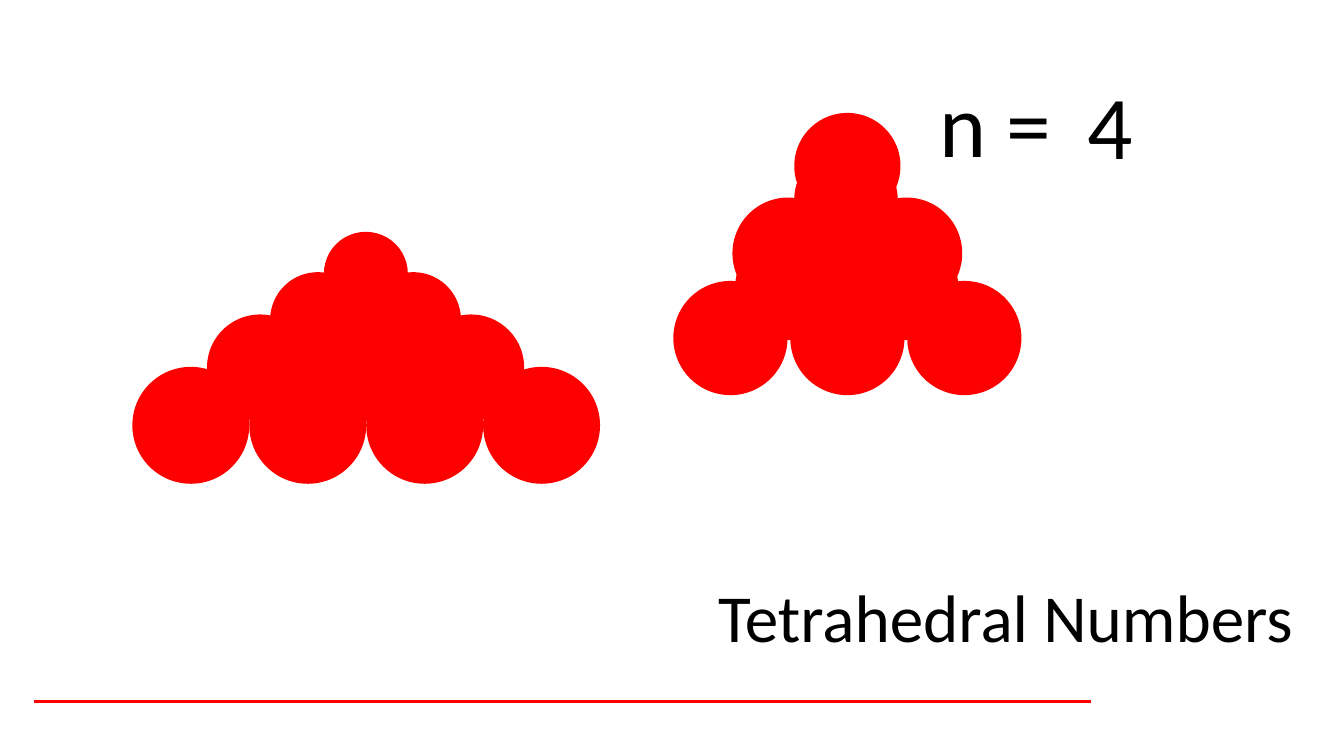
"""Build the tetrahedral numbers slide: two stacks of spheres for n = 4."""
from pptx import Presentation
from pptx.dml.color import RGBColor
from pptx.enum.shapes import MSO_CONNECTOR, MSO_SHAPE
from pptx.enum.text import MSO_AUTO_SIZE, PP_ALIGN
from pptx.oxml.ns import qn
from pptx.util import Pt

STRAIGHT = MSO_CONNECTOR.STRAIGHT
OVAL = MSO_SHAPE.OVAL
GROW = MSO_AUTO_SIZE.SHAPE_TO_FIT_TEXT
LEFT, RIGHT = PP_ALIGN.LEFT, PP_ALIGN.RIGHT

PX = 4572
THEME = {
    "font": "Calibri",
    "ink": RGBColor(0, 0, 0),
    "rule": RGBColor(0xFF, 0, 0),
    "sphere": RGBColor(0xFD, 0x01, 0),
    "count_size": Pt(48),
    "title_size": Pt(36),
    "rule_width": Pt(2),
}

prs = Presentation()
prs.slide_width, prs.slide_height = 2000 * PX, 1125 * PX
slide = prs.slides.add_slide(prs.slide_layouts[6])

footer_rule = slide.shapes.add_connector(STRAIGHT, 50 * PX, 1044 * PX, 1624 * PX, 1044 * PX)
footer_rule.line.color.rgb = THEME["rule"]
footer_rule.line.width = THEME["rule_width"]
properties = footer_rule._element.spPr
properties.append(properties.makeelement(qn("a:effectLst"), {}))

labels = [
    ("n =", 1378, 92, 252, 182, "count_size", LEFT),
    ("4", 1598, 94, 252, 182, "count_size", LEFT),
    ("Tetrahedral Numbers", 826, 846, 1118, 142, "title_size", RIGHT),
]
for wording, left, top, width, height, size, align in labels:
    label = slide.shapes.add_textbox(left * PX, top * PX, width * PX, height * PX)
    frame = label.text_frame
    frame.word_wrap = True
    frame.auto_size = GROW
    frame.text = wording
    paragraph = frame.paragraphs[0]
    paragraph.alignment = align
    font = paragraph.runs[0].font
    font.name = THEME["font"]
    font.size = THEME[size]
    font.color.rgb = THEME["ink"]

sphere_rows = [
    (482, 345, 125, 0, 1),
    (402, 405, 142, 142, 2),
    (308, 468, 158, 157, 3),
    (1190, 284, 142, 0, 1),
    (1094, 348, 158, 174, 2),
    (1182, 220, 154, 0, 1),
    (1182, 168, 158, 0, 1),
    (1090, 294, 166, 176, 2),
    (1002, 418, 170, 174, 3),
    (197, 546, 174, 174, 4),
]
for left, top, diameter, pitch, count in sphere_rows:
    for column in reversed(range(count)):
        x = left + column * pitch
        sphere = slide.shapes.add_shape(OVAL, x * PX, top * PX, diameter * PX, diameter * PX)
        sphere.shadow.inherit = False
        sphere.fill.solid()
        sphere.fill.fore_color.rgb = THEME["sphere"]
        sphere.line.fill.background()

prs.save("out.pptx")
